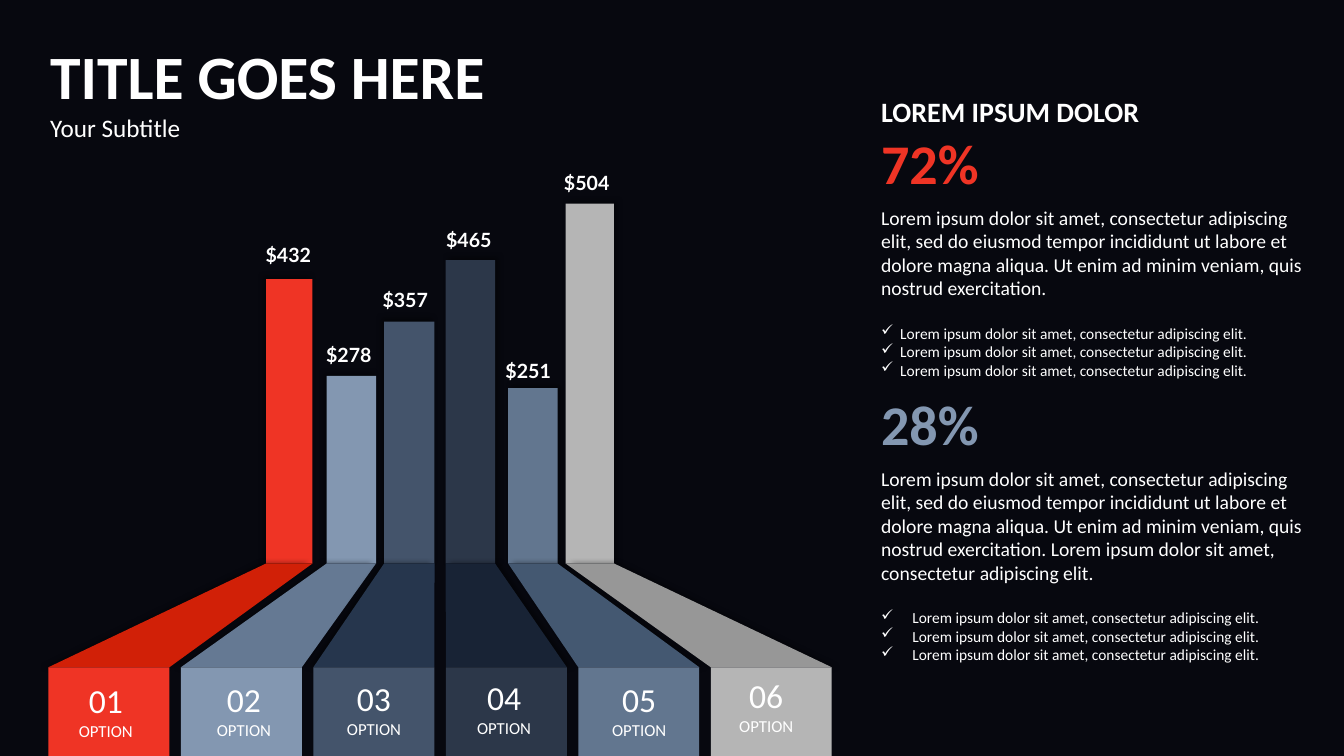
"""Build a slide with six perspective columns and a text panel."""
import pptx
import pptx.dml.color
import pptx.enum.shapes
import pptx.enum.text
import pptx.oxml
import pptx.oxml.ns
import pptx.util
from pptx.util import Inches

COLORS = {
    "background": "07080F", "white": "FFFFFF", "shadow": "000000",
    "red": "EF3425", "red_ramp": "D12007",
    "light_blue": "8397B1", "light_blue_ramp": "657993",
    "slate": "44546B", "slate_ramp": "26364D",
    "navy": "2C3749", "navy_ramp": "182335",
    "steel": "62768F", "steel_ramp": "445871",
    "gray": "B5B5B5", "gray_ramp": "979797",
}
FLOOR = 5.59
BASE_TOP = 6.62
BASE_WIDTH = 1.2
BASE_LEFT = 0.48
BASE_PITCH = (7.05 - BASE_LEFT) / 5

presentation = pptx.Presentation()
presentation.slide_width = Inches(13.33)
presentation.slide_height = Inches(7.5)
slide = presentation.slides.add_slide(presentation.slide_layouts[6])
slide.background.fill.solid()
slide.background.fill.fore_color.rgb = pptx.dml.color.RGBColor.from_string(COLORS["background"])


def paint(shape, color, shadow_angle=None):
    shape.fill.solid()
    shape.fill.fore_color.rgb = pptx.dml.color.RGBColor.from_string(COLORS[color])
    shape.line.fill.background()
    shape.shadow.inherit = False
    if shadow_angle is not None:
        effects = shape._element.spPr.find(pptx.oxml.ns.qn("a:effectLst"))
        effects.append(pptx.oxml.parse_xml(
            f'<a:outerShdw {pptx.oxml.ns.nsdecls("a")} blurRad="{pptx.util.Pt(4)}" '
            f'dist="{pptx.util.Pt(3)}" dir="{shadow_angle * 60000}" rotWithShape="0">'
            f'<a:srgbClr val="{COLORS["shadow"]}"><a:alpha val="40000"/></a:srgbClr></a:outerShdw>'))


def add_text(left, top, width, height, lines, font="Calibri", centered=False, margins=(0.1, 0.05)):
    box = slide.shapes.add_textbox(Inches(left), Inches(top), Inches(width), Inches(height))
    frame = box.text_frame
    frame.word_wrap = True
    frame.auto_size = pptx.enum.text.MSO_AUTO_SIZE.SHAPE_TO_FIT_TEXT
    frame.margin_left = frame.margin_right = Inches(margins[0])
    frame.margin_top = frame.margin_bottom = Inches(margins[1])
    for index, (text, size, bold, color, space_before, indent) in enumerate(lines):
        paragraph = frame.add_paragraph() if index else frame.paragraphs[0]
        if centered:
            paragraph.alignment = pptx.enum.text.PP_ALIGN.CENTER
        if indent:
            properties = paragraph._p.get_or_add_pPr()
            properties.set("marL", str(Inches(indent)))
            properties.set("indent", str(-Inches(indent)))
            properties.append(pptx.oxml.parse_xml(
                f'<a:buChar {pptx.oxml.ns.nsdecls("a")} char="✓"/>'))
        if space_before:
            paragraph.space_before = pptx.util.Pt(space_before)
        run = paragraph.add_run()
        run.text = text
        run.font.name = font
        run.font.size = pptx.util.Pt(size)
        run.font.bold = bold
        run.font.color.rgb = pptx.dml.color.RGBColor.from_string(COLORS[color])


# color, bar left, top, width, shadow angle, value, value left, top, option left, top
columns = [
    ("red", 2.64, 2.77, 0.46, 225, "$432", 2.48, 2.38, 0.6, 6.7),
    ("light_blue", 3.24, 3.73, 0.49, 225, "$278", 3.08, 3.37, 1.97, 6.69),
    ("slate", 3.81, 3.19, 0.5, 225, "$357", 3.64, 2.83, 3.26, 6.68),
    ("navy", 4.42, 2.58, 0.49, 315, "$465", 4.27, 2.23, 4.55, 6.67),
    ("steel", 5.04, 3.85, 0.49, 315, "$251", 4.86, 3.53, 5.89, 6.69),
    ("gray", 5.61, 2.02, 0.48, 315, "$504", 5.44, 1.67, 7.15, 6.65),
]
rectangle = pptx.enum.shapes.MSO_SHAPE.RECTANGLE

for color, left, top, width, angle, *labels in columns:
    bar = slide.shapes.add_shape(
        rectangle, Inches(left), Inches(top), Inches(width), Inches(FLOOR - top))
    paint(bar, color, angle)

for index, (color, left, top, width, angle, *labels) in enumerate(columns):
    base_left = BASE_LEFT + index * BASE_PITCH
    corners = [(left + width, FLOOR), (base_left + BASE_WIDTH, BASE_TOP), (base_left, BASE_TOP)]
    builder = slide.shapes.build_freeform(Inches(left), Inches(FLOOR))
    builder.add_line_segments([(Inches(x), Inches(y)) for x, y in corners], close=True)
    paint(builder.convert_to_shape(), color + "_ramp", 180 if index < 3 else 0)

for index, (color, *bar_data, value, value_left, value_top, option_left, option_top) in enumerate(columns):
    base = slide.shapes.add_shape(
        rectangle, Inches(BASE_LEFT + index * BASE_PITCH), Inches(BASE_TOP),
        Inches(BASE_WIDTH), Inches(7.5 - BASE_TOP))
    paint(base, color)
    add_text(value_left, value_top, 0.76, 0.3, [(value, 14, True, "white", 0, 0)],
             font="Lato", centered=True, margins=(0.07, 0.03))
    add_text(option_left, option_top, 0.9, 0.71,
             [(f"{index + 1:02d}", 24, False, "white", 0, 0),
              ("OPTION", 12, False, "white", 0, 0)], centered=True)

add_text(0.4, 0.33, 6.5, 1.14, [
    ("TITLE GOES HERE", 44, True, "white", 0, 0),
    ("Your Subtitle", 18, False, "white", 0, 0),
])

sentence = "Lorem ipsum dolor sit amet, consectetur adipiscing elit."
body = ("Lorem ipsum dolor sit amet, consectetur adipiscing elit, sed do eiusmod tempor "
        "incididunt ut labore et dolore magna aliqua. Ut enim ad minim veniam, quis "
        "nostrud exercitation.")
panel = [("LOREM IPSUM DOLOR", 20, True, "white", 0, 0)]
for percent, color, gap, text, indent in [
    ("72%", "red", 0, body, 0.19),
    ("28%", "light_blue", 7.3, f"{body} {sentence}", 0.31),
]:
    panel.append((percent, 40, True, color, gap, 0))
    panel.append((text, 14, False, "white", 7.3, 0))
    panel += [(sentence, 11, False, "white", space, indent) for space in (17, 0, 0)]
add_text(8.64, 0.89, 4.39, 6.16, panel)

presentation.save("out.pptx")
